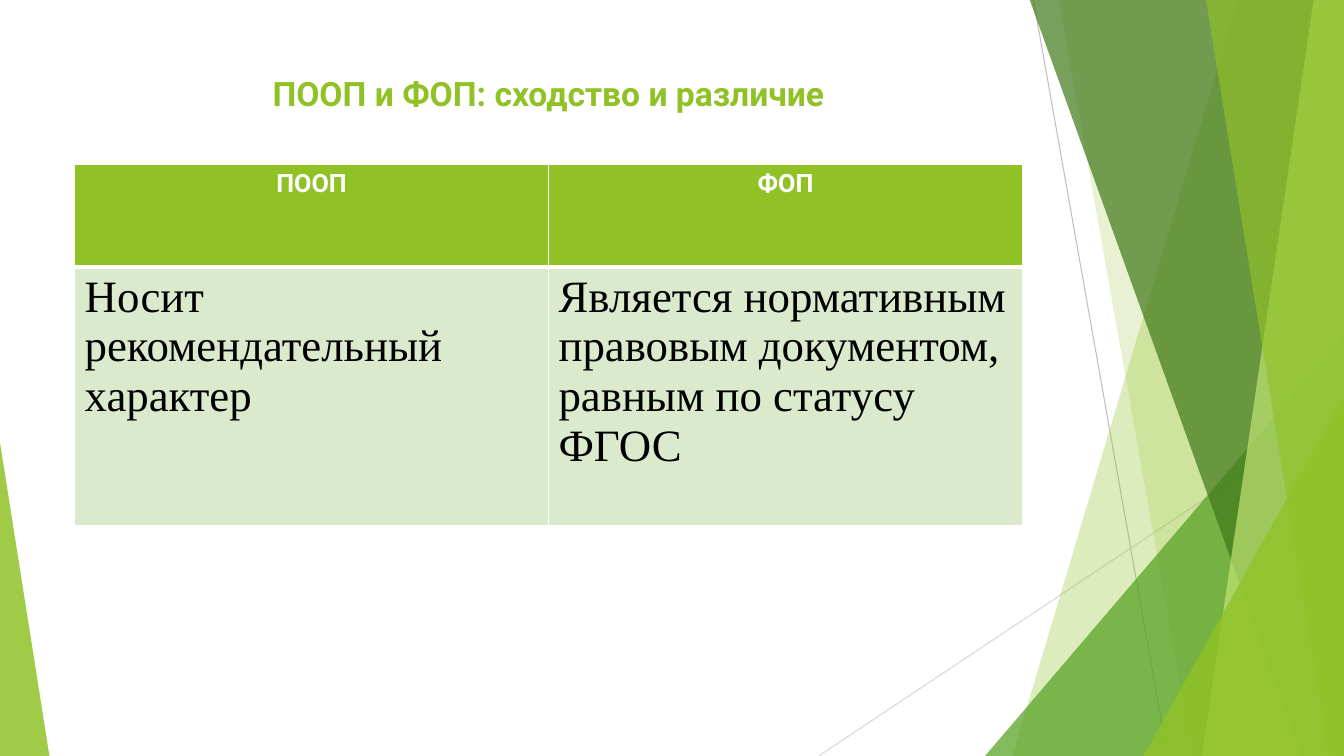
from lxml import etree
from pptx import Presentation, util as u
from pptx.dml import color
from pptx.enum import shapes, text
from pptx.oxml import ns

PX = 9144
WIDTH, HEIGHT = 1333, 750
GREEN, WHITE = "90C226", "FFFFFF"
HEADINGS = ["ПООП", "ФОП"]
DETAILS = [
    ["Носит рекомендательный характер"],
    ["Является нормативным", "правовым документом,", "равным по статусу ФГОС"],
]


def px(length):
    """Turn whole px into EMU."""
    return u.Emu(length * PX)


def rgb(value):
    """Turn a hex string into a colour."""
    return color.RGBColor.from_string(value)


def paint(shape, fill, opacity):
    """Give a shape a see-through fill with no outline or shadow."""
    shape.shadow.inherit = False
    shape.line.fill.background()
    shape.fill.solid()
    shape.fill.fore_color.rgb = rgb(fill)
    tint = shape.fill._xPr.find(".//" + ns.qn("a:srgbClr"))
    etree.SubElement(tint, ns.qn("a:alpha"), val=str(opacity * 1000))


def add_line(page, start, end, stroke):
    """Draw a thin straight line."""
    line = page.shapes.add_connector(
        shapes.MSO_CONNECTOR.STRAIGHT, *map(px, start + end))
    line.line.color.rgb = rgb(stroke)
    line.line.width = u.Pt(0.75)
    etree.SubElement(line._element.spPr, ns.qn("a:effectLst"))


def add_band(page, box, top_left, bottom_left, fill, opacity):
    """Draw a slanted band that reaches the right side of its box."""
    left, top, width, height = box
    right, bottom = left + width, top + height
    outline = page.shapes.build_freeform(left + top_left, top, scale=PX)
    outline.add_line_segments(
        [(right, top), (right, bottom), (left + bottom_left, bottom)])
    paint(outline.convert_to_shape(), fill, opacity)


def add_triangle(page, box, apex, fill, opacity):
    """Draw a triangle with its apex at the given share of the width."""
    triangle = page.shapes.add_shape(
        shapes.MSO_SHAPE.ISOSCELES_TRIANGLE, *map(px, box))
    triangle.adjustments[0] = apex
    paint(triangle, fill, opacity)


def add_facets(page, box):
    """Draw the green facets along the sides of the page."""
    left, top, width, height = box
    right, bottom = left + width, top + height

    def band(top_x, bottom_x, fill, opacity):
        """Place one band between its two left corners."""
        start = min(top_x, bottom_x)
        add_band(page, (start, top - 1, right - start, height + 1),
                 top_x - start, bottom_x - start, fill, opacity)

    def corner(wide, high, fill, opacity):
        """Place one triangle in the lower right corner."""
        add_triangle(page, (right - wide, bottom - high, wide, high),
                     1, fill, opacity)

    add_line(page, (left + 1025, top), (left + 1158, bottom), "BFBFBF")
    add_line(page, (right, top + 403), (left + 812, bottom), "D9D9D9")
    band(1228, 1004, GREEN, 30)
    band(1050, 1183, GREEN, 20)
    corner(356, 417, "54A021", 72)
    band(1021, 1291, "3F7819", 70)
    band(1303, 1192, "C0E474", 70)
    band(1196, 1318, GREEN, 65)
    corner(199, 357, GREEN, 80)
    add_triangle(page, (left, bottom - 311, 49, 311), 0, GREEN, 85)


def write(frame, lines, size, font, ink, bold, align):
    """Fill a text frame with one paragraph per line."""
    frame.word_wrap = True
    for number, line in enumerate(lines):
        para = frame.add_paragraph() if number else frame.paragraphs[0]
        para.alignment = align
        span = para.add_run()
        span.text = line
        span.font.size = u.Pt(size)
        span.font.name = font
        span.font.bold = bold
        span.font.color.rgb = rgb(ink)


def add_title(page, box):
    """Write the centred heading."""
    title = page.shapes.add_textbox(*map(px, box))
    title.text_frame.vertical_anchor = text.MSO_ANCHOR.TOP
    write(title.text_frame, ["ПООП и ФОП: сходство и различие"],
          24, "Roboto", GREEN, True, text.PP_ALIGN.CENTER)


def style_cell(cell, fill, top, bottom):
    """Give a cell its fill and white borders."""
    props = cell._tc.get_or_add_tcPr()
    for side, points in (("L", 1), ("R", 1), ("T", top), ("B", bottom)):
        border = etree.SubElement(
            props, ns.qn("a:ln" + side), w=str(u.Pt(points)))
        solid = etree.SubElement(border, ns.qn("a:solidFill"))
        etree.SubElement(solid, ns.qn("a:srgbClr"), val=WHITE)
    cell.fill.solid()
    cell.fill.fore_color.rgb = rgb(fill)


def add_comparison(page, box):
    """Build the two-column comparison table."""
    header_height = 102
    table = page.shapes.add_table(2, len(HEADINGS), *map(px, box)).table
    table.rows[0].height = px(header_height)
    table.rows[1].height = px(box[3] - header_height)
    for column, (heading, detail) in enumerate(zip(HEADINGS, DETAILS)):
        table.columns[column].width = px(box[2] // len(HEADINGS))
        head, body = table.cell(0, column), table.cell(1, column)
        style_cell(head, GREEN, 1, 3)
        style_cell(body, "DBE9CD", 3, 1)
        write(head.text_frame, [heading], 18, "Roboto", WHITE, True,
              text.PP_ALIGN.CENTER)
        write(body.text_frame, detail, 32, "Times New Roman", "000000",
              False, text.PP_ALIGN.LEFT)


def main():
    """Build the slide and save the deck."""
    deck = Presentation()
    deck.slide_width, deck.slide_height = u.Inches(13.33), px(HEIGHT)
    page = deck.slides.add_slide(deck.slide_layouts[6])
    add_facets(page, (0, 0, WIDTH, HEIGHT))
    add_title(page, (74, 67, 940, 71))
    add_comparison(page, (74, 163, 940, 358))
    deck.save("out.pptx")


if __name__ == "__main__":
    main()
